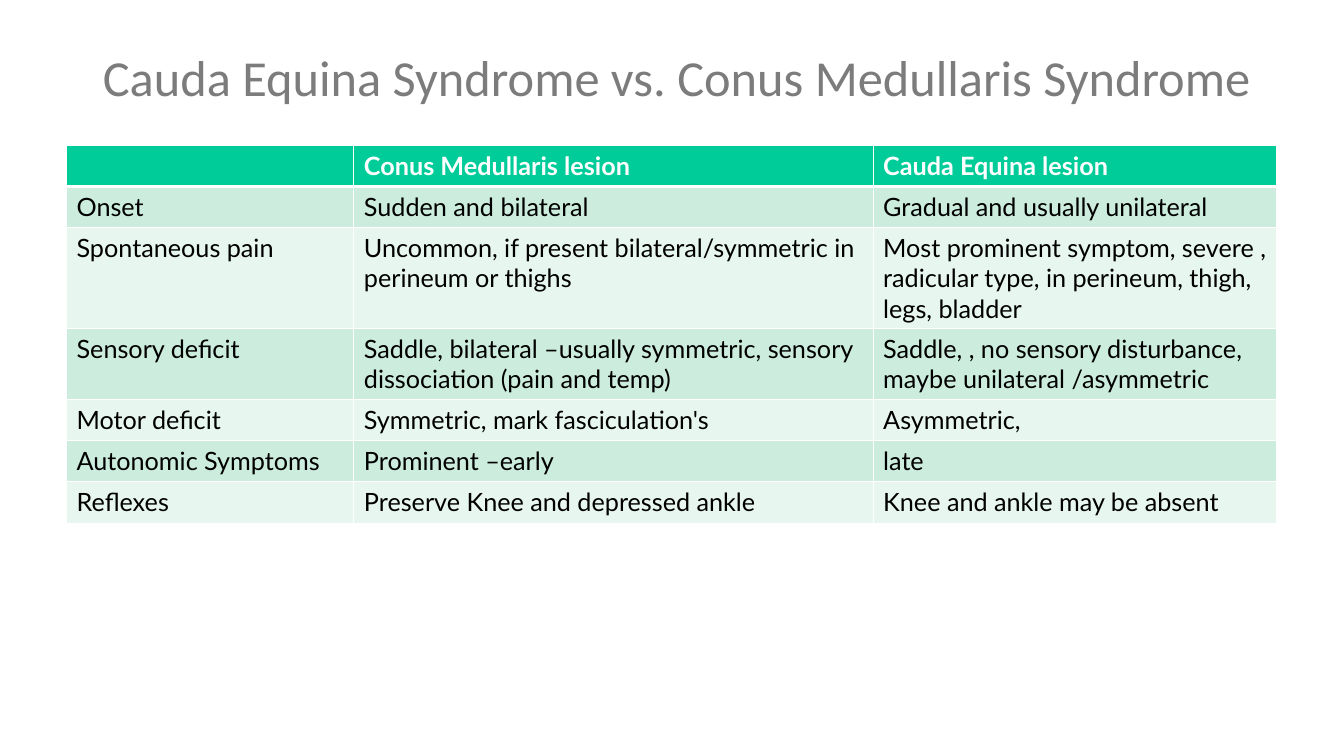
from lxml import etree
from pptx import Presentation
from pptx.dml.color import RGBColor
from pptx.enum import text
from pptx.oxml import ns
from pptx.util import Inches, Pt

GREY = RGBColor(0x7B, 0x7C, 0x7B)
GREEN = RGBColor(0x00, 0xCC, 0x99)
MINT = RGBColor(0xCC, 0xEC, 0xDE)
PALE_MINT = RGBColor(0xE7, 0xF6, 0xEF)
WHITE = RGBColor(0xFF, 0xFF, 0xFF)
BLACK = RGBColor(0x00, 0x00, 0x00)

HEADING = "Cauda Equina Syndrome vs. Conus Medullaris Syndrome"
COLUMN_WIDTHS = (2.85, 5.15, 4)
ROW_HEIGHT = 0.41
COMPARISON = [
    ("", "Conus Medullaris lesion", "Cauda Equina lesion"),
    ("Onset", "Sudden and bilateral", "Gradual and usually unilateral"),
    ("Spontaneous pain",
     "Uncommon, if present bilateral/symmetric in perineum or thighs",
     "Most prominent symptom, severe , radicular type, in perineum, thigh, legs, bladder"),
    ("Sensory deficit",
     "Saddle, bilateral –usually symmetric, sensory dissociation (pain and temp)",
     "Saddle, , no sensory disturbance, maybe unilateral /asymmetric"),
    ("Motor deficit", "Symmetric, mark fasciculation's", "Asymmetric,"),
    ("Autonomic Symptoms", "Prominent –early", "late"),
    ("Reflexes", "Preserve Knee and depressed ankle", "Knee and ankle may be absent"),
]


def style_font(font, color, **formats):
    """Apply a colour and other format values to a font."""
    for key, value in formats.items():
        setattr(font, key, value)
    font.color.rgb = color


def add_heading(slide, left, top, width, height):
    """Place and format the slide title in the given box."""
    heading = slide.shapes.title
    box = {"left": left, "top": top, "width": width, "height": height}
    for side, length in box.items():
        setattr(heading, side, Inches(length))
    frame = heading.text_frame
    frame.text = HEADING
    frame.word_wrap = True
    frame.auto_size = text.MSO_AUTO_SIZE.NONE
    frame.vertical_anchor = text.MSO_ANCHOR.TOP
    line = frame.paragraphs[0]
    line.alignment = text.PP_ALIGN.LEFT
    line.line_spacing = 1.02
    style_font(line.runs[0].font, GREY, name="Calibri", size=Pt(36))


def add_borders(cell, bottom):
    """Draw white cell borders, one point wide except at the bottom."""
    properties = cell._tc.get_or_add_tcPr()
    for side, width in {"L": 1, "R": 1, "T": 1, "B": bottom}.items():
        border = etree.SubElement(properties, ns.qn(f"a:ln{side}"), w=str(Pt(width)))
        fill = etree.SubElement(border, ns.qn("a:solidFill"))
        etree.SubElement(fill, ns.qn("a:srgbClr"), val=str(WHITE))


def add_comparison(slide, left, top):
    """Build the lesion comparison table from its top left corner."""
    table = slide.shapes.add_table(
        len(COMPARISON), len(COLUMN_WIDTHS), Inches(left), Inches(top),
        Inches(sum(COLUMN_WIDTHS)), Inches(ROW_HEIGHT * len(COMPARISON))).table
    for column, width in zip(table.columns, COLUMN_WIDTHS):
        column.width = Inches(width)
    for index, (row, entries) in enumerate(zip(table.rows, COMPARISON)):
        row.height = Inches(ROW_HEIGHT)
        header = index == 0
        shade = GREEN if header else (PALE_MINT, MINT)[index % 2]
        for cell, entry in zip(row.cells, entries):
            add_borders(cell, 3 if header or index == 0 else 1)
            cell.fill.solid()
            cell.fill.fore_color.rgb = shade
            cell.text = entry
            style_font(cell.text_frame.paragraphs[0].font, WHITE if header else BLACK,
                       name="Lato", size=Pt(18), bold=header)


def main():
    """Create the presentation and save it."""
    deck = Presentation()
    deck.slide_width, deck.slide_height = Inches(13.33), Inches(7.5)
    slide = deck.slides.add_slide(deck.slide_layouts[5])
    add_heading(slide, 0.92, 0.4, 11.97, 1.45)
    add_comparison(slide, 0.66, 1.44)
    deck.save("out.pptx")


if __name__ == "__main__":
    main()
